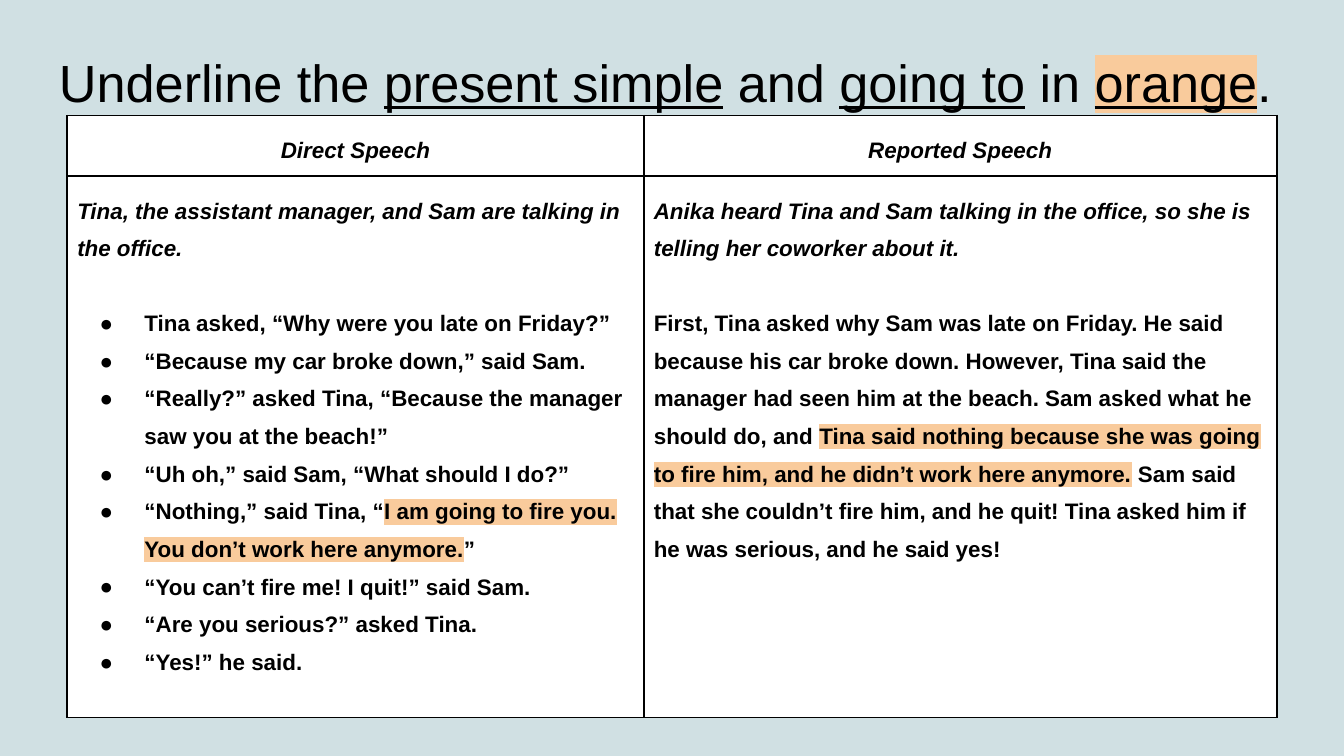
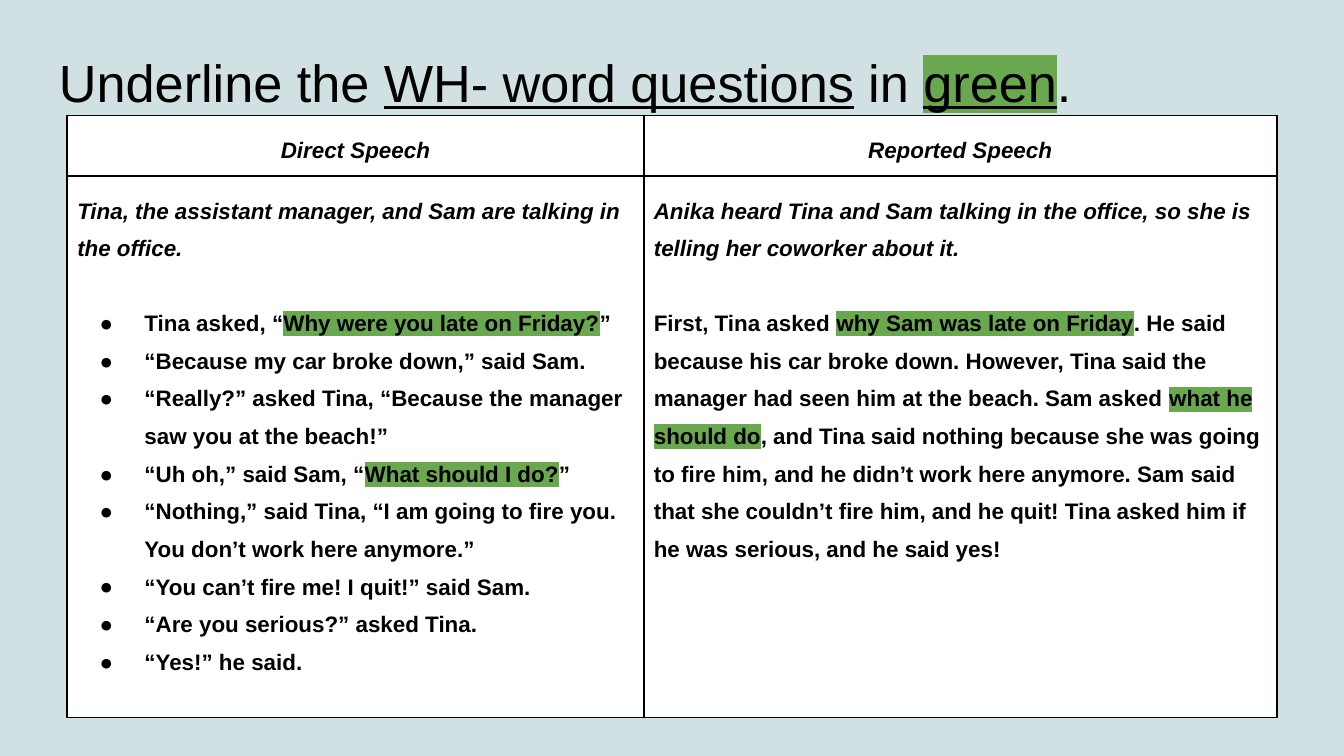
from dataclasses import dataclass

from lxml.etree import SubElement
from pptx import Presentation
from pptx.dml.color import RGBColor
from pptx.enum.text import MSO_ANCHOR, PP_ALIGN
from pptx.oxml.ns import qn
from pptx.util import Pt


@dataclass(frozen=True)
class Theme:
    font: str = "Arial"
    title_size: float = 28
    body_size: float = 12
    line_spacing: float = 1.5
    background: str = "D0E0E3"
    cell: str = "FFFFFF"
    ink: str = "000000"
    orange: str = "F9CB9C"
    green: str = "6AA84F"


THEME = Theme()
COLUMN_WIDTHS = (308.9, 339.1)
ROW_HEIGHTS = (25.2, 225.4)
CELL_INSET = 5.4
BLANK_LINE = 20.1

HEADERS = ("Direct Speech", "Reported Speech")
DIRECT_INTRO = "Tina, the assistant manager, and Sam are talking in the office."
REPORTED_INTRO = ("Anika heard Tina and Sam talking in the office, "
                  "so she is telling her coworker about it.")
DIALOGUE = (
    "Tina asked, “Why were you late on Friday?”",
    "“Because my car broke down,” said Sam.",
    "“Really?” asked Tina, “Because the manager saw you at the beach!”",
    "“Uh oh,” said Sam, “What should I do?”",
    "“Nothing,” said Tina, “I am going to fire you. You don’t work here anymore.”",
    "“You can’t fire me! I quit!” said Sam.",
    "“Are you serious?” asked Tina.",
    "“Yes!” he said.",
)
REPORT = (
    "First, Tina asked why Sam was late on Friday. He said because his car broke down. "
    "However, Tina said the manager had seen him at the beach. Sam asked what he should do, "
    "and Tina said nothing because she was going to fire him, and he didn’t work here anymore. "
    "Sam said that she couldn’t fire him, and he quit! Tina asked him if he was serious, "
    "and he said yes!"
)

# Title, underlined title phrases, colour name, phrases highlighted in the table
EXERCISES = (
    ("Underline the present simple and going to in orange.",
     ("present simple", "going to"), "orange",
     ("I am going to fire you. You don’t work here anymore.",
      "Tina said nothing because she was going to fire him, "
      "and he didn’t work here anymore.")),
    ("Underline the WH- word questions in green.",
     ("WH- word questions",), "green",
     ("Why were you late on Friday?", "What should I do?",
      "why Sam was late on Friday", "what he should do")),
)


def split_phrases(text, phrases):
    """Cut text so that each listed phrase is a piece of its own."""
    pieces = [text]
    for phrase in phrases:
        pieces = [part for piece in pieces
                  for part in (piece.partition(phrase) if piece != phrase else (piece,))
                  if part]
    return pieces


def add_solid_fill(parent, color):
    fill = SubElement(parent, qn("a:solidFill"))
    SubElement(fill, qn("a:srgbClr"), val=color)


def add_run(p, text, size, bold=None, italic=None, underline=None, highlight=None):
    r = p.add_run()
    r.text = text
    font = r.font
    font.size, font.bold, font.italic, font.underline = Pt(size), bold, italic, underline
    font.color.rgb = RGBColor.from_string(THEME.ink)
    if highlight:
        mark = SubElement(r._r.get_or_add_rPr(), qn("a:highlight"))
        SubElement(mark, qn("a:srgbClr"), val=highlight)
    font.name = THEME.font


def add_bullet(p):
    pPr = p._p.get_or_add_pPr()
    pPr.set("marL", str(Pt(36)))
    pPr.set("indent", str(Pt(-24)))
    color = SubElement(pPr, qn("a:buClr"))
    SubElement(color, qn("a:srgbClr"), val=THEME.ink)
    SubElement(pPr, qn("a:buFont"), typeface=THEME.font)
    SubElement(pPr, qn("a:buChar"), char="●")


def write_paragraph(p, text, color=None, phrases=(), italic=False):
    p.line_spacing = THEME.line_spacing
    for piece in split_phrases(text, phrases):
        add_run(p, piece, THEME.body_size, bold=True, italic=italic,
                highlight=color if piece in phrases else None)


def style_cell(cell):
    cell.margin_left = cell.margin_right = Pt(CELL_INSET)
    cell.margin_top = cell.margin_bottom = Pt(CELL_INSET)
    tcPr = cell._tc.get_or_add_tcPr()
    for side in ("a:lnL", "a:lnR", "a:lnT", "a:lnB"):
        add_solid_fill(SubElement(tcPr, qn(side), w=str(Pt(1))), THEME.ink)
    cell.fill.solid()
    cell.fill.fore_color.rgb = RGBColor.from_string(THEME.cell)


def fill_speech_cell(cell, intro, lines, color, phrases, bulleted=False):
    tf = cell.text_frame
    write_paragraph(tf.paragraphs[0], intro, italic=True)
    tf.paragraphs[0].space_after = Pt(BLANK_LINE)
    for line in lines:
        p = tf.add_paragraph()
        write_paragraph(p, line, color, phrases)
        if bulleted:
            add_bullet(p)


def add_title(s, text, underlined, color_name, color):
    tf = s.shapes.add_textbox(Pt(24.5), Pt(17.3), Pt(671), Pt(56.2)).text_frame
    tf.word_wrap = True
    tf.vertical_anchor = MSO_ANCHOR.TOP
    tf.margin_left = tf.margin_right = tf.margin_bottom = Pt(7.2)
    tf.margin_top = Pt(9.5)
    phrases = (*underlined, color_name)
    for piece in split_phrases(text, phrases):
        add_run(tf.paragraphs[0], piece, THEME.title_size,
                underline=piece in phrases,
                highlight=color if piece == color_name else None)


def add_speech_table(s, color, phrases):
    table = s.shapes.add_table(2, 2, Pt(36), Pt(61.9),
                               Pt(sum(COLUMN_WIDTHS)), Pt(sum(ROW_HEIGHTS))).table
    table.first_row = table.horz_banding = False
    for column, width in zip(table.columns, COLUMN_WIDTHS):
        column.width = Pt(width)
    for row, height in zip(table.rows, ROW_HEIGHTS):
        row.height = Pt(height)
    for cell in table.iter_cells():
        style_cell(cell)
    for i, header in enumerate(HEADERS):
        p = table.cell(0, i).text_frame.paragraphs[0]
        write_paragraph(p, header, italic=True)
        p.alignment = PP_ALIGN.CENTER
    fill_speech_cell(table.cell(1, 0), DIRECT_INTRO, DIALOGUE, color, phrases, bulleted=True)
    fill_speech_cell(table.cell(1, 1), REPORTED_INTRO, (REPORT,), color, phrases)


def add_exercise(prs, title, underlined, color_name, phrases):
    s = prs.slides.add_slide(prs.slide_layouts[6])
    s.background.fill.solid()
    s.background.fill.fore_color.rgb = RGBColor.from_string(THEME.background)
    color = getattr(THEME, color_name)
    add_title(s, title, underlined, color_name, color)
    add_speech_table(s, color, phrases)


def main():
    prs = Presentation()
    prs.slide_width, prs.slide_height = Pt(720), Pt(405)
    for exercise in EXERCISES:
        add_exercise(prs, *exercise)
    prs.save("out.pptx")


if __name__ == "__main__":
    main()
